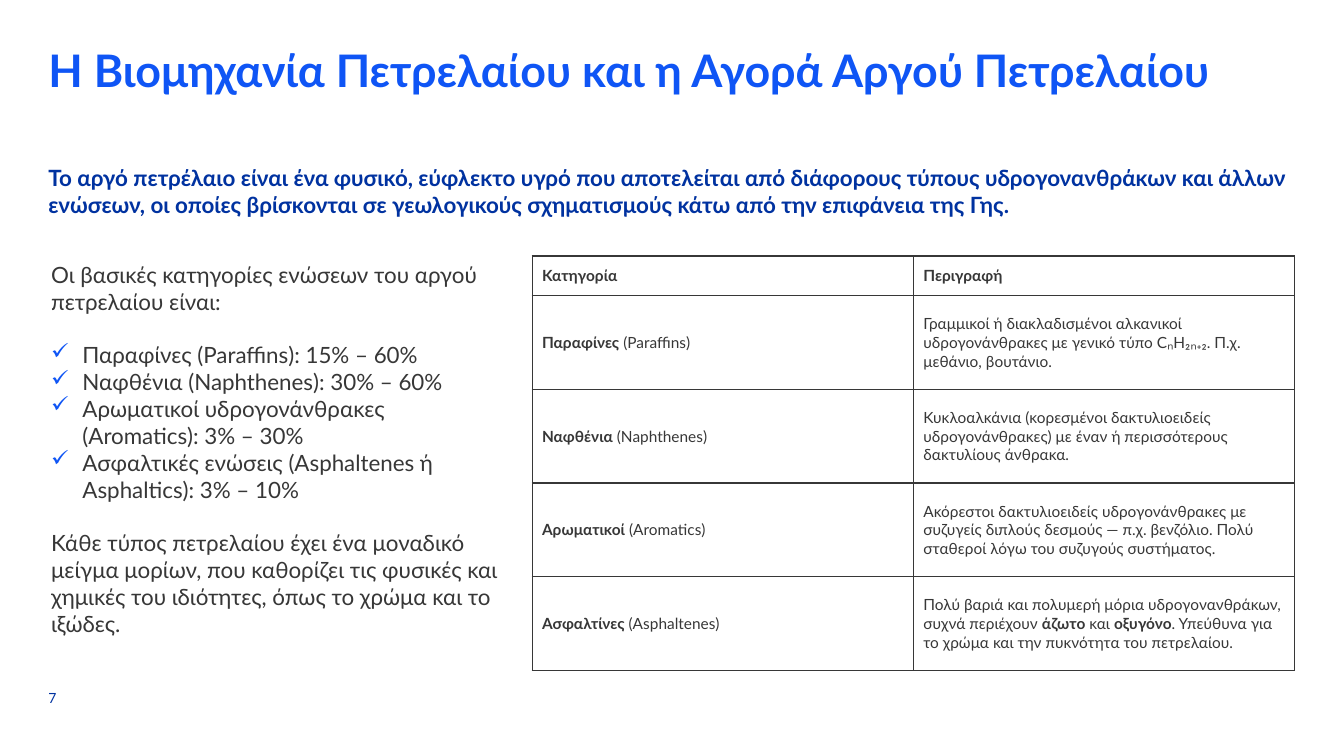
from dataclasses import dataclass

from lxml import etree
from pptx import Presentation
from pptx.dml.color import RGBColor
from pptx.enum.text import MSO_ANCHOR, PP_ALIGN
from pptx.oxml.ns import qn
from pptx.util import Cm, Pt

TOP, MIDDLE, BOTTOM = MSO_ANCHOR.TOP, MSO_ANCHOR.MIDDLE, MSO_ANCHOR.BOTTOM
LEFT = PP_ALIGN.LEFT
TITLE_ONLY = 5


@dataclass(frozen=True)
class Theme:
    font: str = "Lato"
    blue: str = "0F55F5"
    navy: str = "0032A0"
    ink: str = "373737"
    title: float = 32
    body: float = 16
    cell: float = 11
    page_number: float = 10
    blank_line: float = 19.2
    border: float = 1


THEME = Theme()

TITLE = "Η Βιομηχανία Πετρελαίου και η Αγορά Αργού Πετρελαίου"
DEFINITION = (
    "Το αργό πετρέλαιο είναι ένα φυσικό, εύφλεκτο υγρό που αποτελείται από διάφορους τύπους "
    "υδρογονανθράκων και άλλων ενώσεων, οι οποίες βρίσκονται σε γεωλογικούς σχηματισμούς κάτω "
    "από την επιφάνεια της Γης."
)
INTRO = "Οι βασικές κατηγορίες ενώσεων του αργού πετρελαίου είναι:"
SHARES = [
    "Παραφίνες (Paraffins): 15% – 60%",
    "Ναφθένια (Naphthenes): 30% – 60%",
    "Αρωματικοί υδρογονάνθρακες \v(Aromatics): 3% – 30%",
    "Ασφαλτικές ενώσεις (Asphaltenes ή Asphaltics): 3% – 10%",
]
CLOSING = (
    "Κάθε τύπος πετρελαίου έχει ένα μοναδικό μείγμα μορίων, που καθορίζει τις φυσικές και "
    "χημικές του ιδιότητες, όπως το χρώμα και το ιξώδες."
)
# Double asterisks enclose bold words.
COMPOUNDS = [
    ("**Κατηγορία**", "**Περιγραφή**"),
    ("**Παραφίνες** (Paraffins)",
     "Γραμμικοί ή διακλαδισμένοι αλκανικοί υδρογονάνθρακες με γενικό τύπο CₙH₂ₙ₊₂. "
     "Π.χ. μεθάνιο, βουτάνιο."),
    ("**Ναφθένια** (Naphthenes)",
     "Κυκλοαλκάνια (κορεσμένοι δακτυλιοειδείς υδρογονάνθρακες) με έναν ή περισσότερους "
     "δακτυλίους άνθρακα."),
    ("**Αρωματικοί** (Aromatics)",
     "Ακόρεστοι δακτυλιοειδείς υδρογονάνθρακες με συζυγείς διπλούς δεσμούς — π.χ. βενζόλιο. "
     "Πολύ σταθεροί λόγω του συζυγούς συστήματος."),
    ("**Ασφαλτίνες** (Asphaltenes)",
     "Πολύ βαριά και πολυμερή μόρια υδρογονανθράκων, συχνά περιέχουν **άζωτο** και "
     "**οξυγόνο**. Υπεύθυνα για το χρώμα και την πυκνότητα του πετρελαίου."),
]


def style(para, size, color, bold=None):
    para.alignment = LEFT
    font = para.font
    font.name, font.size, font.bold = THEME.font, Pt(size), bold
    font.color.rgb = RGBColor.from_string(color)


def set_frame(frame, anchor=TOP, inset=0):
    frame.word_wrap = True
    frame.vertical_anchor = anchor
    frame.margin_left = frame.margin_right = Cm(inset)
    frame.margin_top = frame.margin_bottom = Cm(inset / 2)


def add_title(page, left, top, width, height):
    title = page.shapes.title
    title.left, title.top, title.width, title.height = left, top, width, height
    set_frame(title.text_frame)
    title.text_frame.text = TITLE
    style(title.text_frame.paragraphs[0], THEME.title, THEME.blue, True)


def add_line(page, box, text, size, bold=False, anchor=TOP):
    """Add a navy text box without insets."""
    frame = page.shapes.add_textbox(*box).text_frame
    set_frame(frame, anchor)
    frame.text = text
    style(frame.paragraphs[0], size, THEME.navy, bold)


def add_check(para):
    """Give a paragraph a blue check mark and a hanging indent."""
    properties = para._p.get_or_add_pPr()
    indent = Cm(0.79)
    properties.set("marL", str(indent))
    properties.set("indent", str(-indent))
    color = etree.SubElement(properties, qn("a:buClr"))
    etree.SubElement(color, qn("a:srgbClr"), val=THEME.blue)
    etree.SubElement(properties, qn("a:buChar"), char="✓")


def add_shares(page, left, top, width, height):
    frame = page.shapes.add_textbox(left, top, width, height).text_frame
    set_frame(frame, inset=0.25)
    for index, text in enumerate([INTRO, *SHARES, CLOSING]):
        para = frame.add_paragraph() if index else frame.paragraphs[0]
        para.text = text
        if text in (SHARES[0], CLOSING):
            para.space_before = Pt(THEME.blank_line)
        if text in SHARES:
            add_check(para)
        style(para, THEME.body, THEME.ink)


def add_borders(cell):
    properties = cell._tc.get_or_add_tcPr()
    for side in ("a:lnL", "a:lnR", "a:lnT", "a:lnB"):
        line = etree.SubElement(properties, qn(side), w=str(Pt(THEME.border)))
        fill = etree.SubElement(line, qn("a:solidFill"))
        etree.SubElement(fill, qn("a:srgbClr"), val=THEME.ink)


def fill_cell(cell, text):
    add_borders(cell)
    cell.fill.background()
    cell.vertical_anchor = MIDDLE
    cell.margin_left = cell.margin_right = Cm(0.25)
    cell.margin_top = cell.margin_bottom = Cm(0.13)
    para = cell.text_frame.paragraphs[0]
    style(para, THEME.cell, THEME.ink)
    for index, part in enumerate(text.split("**")):
        if part:
            span = para.add_run()
            span.text = part
            span.font.bold = index % 2 == 1


def add_compounds(page, left, top, width, height):
    rows, columns = len(COMPOUNDS), len(COMPOUNDS[0])
    table = page.shapes.add_table(rows, columns, left, top, width, height).table
    table.first_row = table.horz_banding = False
    header = Cm(1)
    for index, row in enumerate(table.rows):
        row.height = (height - header) // (rows - 1) if index else header
    for row_index, texts in enumerate(COMPOUNDS):
        for column_index, text in enumerate(texts):
            fill_cell(table.cell(row_index, column_index), text)


def build_page(deck):
    page = deck.slides.add_slide(deck.slide_layouts[TITLE_ONLY])
    margin, full_width = Cm(1.22), Cm(31.4)
    content_top = Cm(6.45)
    add_title(page, margin, Cm(1.07), full_width, Cm(2.2))
    add_line(page, (margin, Cm(4.13), full_width, Cm(1.5)), DEFINITION, THEME.body, True)
    add_shares(page, Cm(1.04), content_top, Cm(11.96), Cm(9.83))
    add_compounds(page, Cm(13.41), content_top, Cm(19.22), Cm(10.44))
    add_line(page, (margin, Cm(17.37), Cm(0.71), Cm(0.43)), "7", THEME.page_number,
             anchor=BOTTOM)


def main():
    deck = Presentation()
    deck.slide_width, deck.slide_height = Cm(33.87), Cm(19.05)
    build_page(deck)
    deck.save("out.pptx")


if __name__ == "__main__":
    main()
